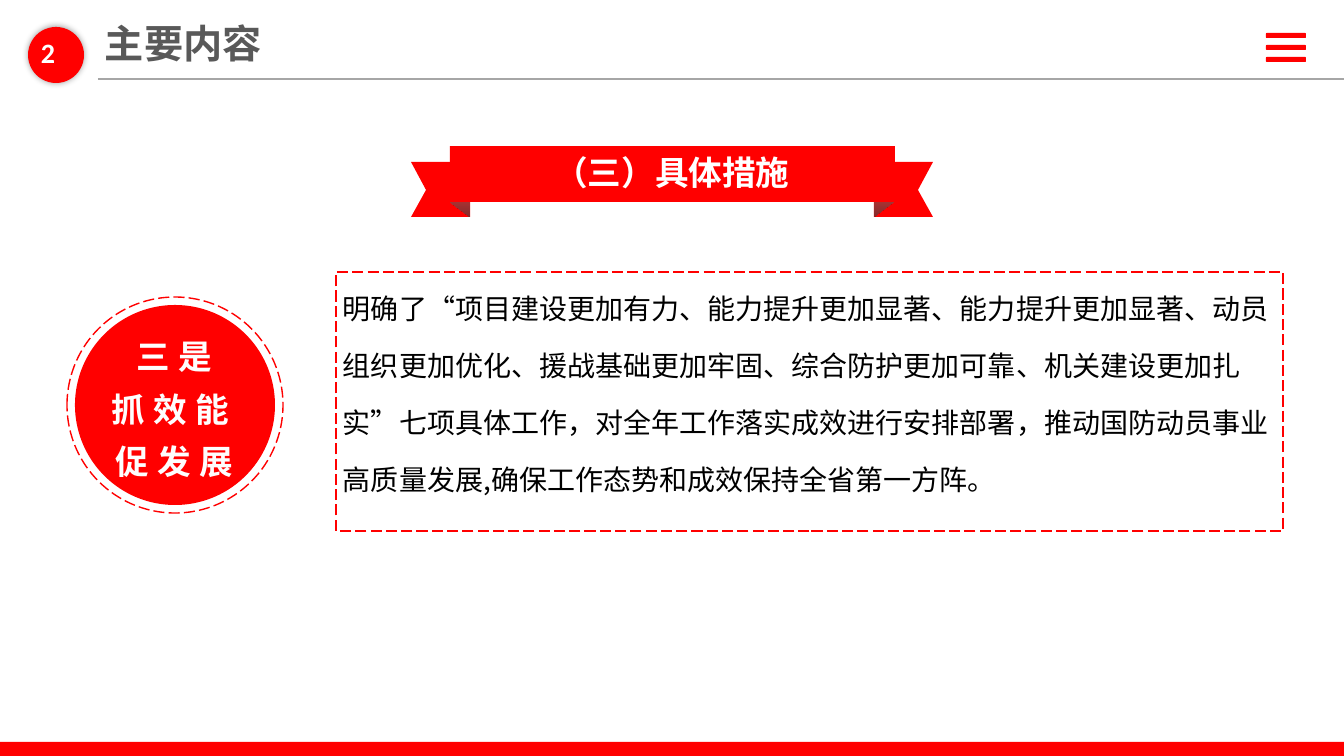
from lxml import etree
from pptx import Presentation
from pptx.dml.color import RGBColor
from pptx.enum.dml import MSO_LINE
from pptx.enum.shapes import MSO_CONNECTOR, MSO_SHAPE
from pptx.enum.text import PP_ALIGN
from pptx.oxml.ns import qn
from pptx.util import Emu, Pt

EMU_PER_PX = 914400 / 100.8
WIDTH, HEIGHT = 1344, 756
RECT, ROUND_RECT, OVAL = MSO_SHAPE.RECTANGLE, MSO_SHAPE.ROUNDED_RECTANGLE, MSO_SHAPE.OVAL
STRAIGHT = MSO_CONNECTOR.STRAIGHT
LONG_DASH = MSO_LINE.LONG_DASH
LEFT, CENTER, JUSTIFY = PP_ALIGN.LEFT, PP_ALIGN.CENTER, PP_ALIGN.JUSTIFY
RED, WHITE, GREY, BLACK = "FF0000", "FFFFFF", "A6A6A6", "000000"
CHINESE_FONT, NUMBER_FONT = "Noto Sans CJK SC", "Calibri"

BODY = (
    "明确了“项目建设更加有力、能力提升更加显著、能力提升更加显著、"
    "动员组织更加优化、援战基础更加牢固、综合防护更加可靠、机关建设更加扎实”"
    "七项具体工作，对全年工作落实成效进行安排部署，"
    "推动国防动员事业高质量发展,确保工作态势和成效保持全省第一方阵。"
)


def px(length):
    return Emu(round(length * EMU_PER_PX))


def color(value):
    return RGBColor.from_string(value)


class SlideBuilder:
    def __init__(self, page):
        self.page = page

    def paint(self, shape, fill=None, dashed=False):
        shape.shadow.inherit = False
        if fill:
            shape.fill.solid()
            shape.fill.fore_color.rgb = color(fill)
        else:
            shape.fill.background()
        if dashed:
            shape.line.color.rgb = color(RED)
            shape.line.width = Pt(1)
            shape.line.dash_style = LONG_DASH
        else:
            shape.line.fill.background()
        return shape

    def shape(self, kind, left, top, width, height, fill=None, dashed=False):
        shape = self.page.shapes.add_shape(kind, px(left), px(top), px(width), px(height))
        return self.paint(shape, fill, dashed)

    def glow(self, shape, blur, opacity):
        effects = shape.element.spPr.find(qn("a:effectLst"))
        shadow = etree.SubElement(effects, qn("a:outerShdw"), blurRad=str(Pt(blur)), dist="0", dir="0")
        shade = etree.SubElement(shadow, qn("a:srgbClr"), val=BLACK)
        etree.SubElement(shade, qn("a:alpha"), val=str(opacity * 1000))

    def polygon(self, points, fill=RED):
        builder = self.page.shapes.build_freeform(*points[0], scale=EMU_PER_PX)
        builder.add_line_segments(points[1:], close=True)
        return self.paint(builder.convert_to_shape(), fill)

    def gradient(self, shape, colors):
        shape.fill.gradient()
        shape.fill.gradient_angle = 270
        for stop, value in zip(shape.fill.gradient_stops, colors):
            stop.color.rgb = color(value)

    def rule(self, left, top, right, value, weight):
        line = self.page.shapes.add_connector(STRAIGHT, px(left), px(top), px(right), px(top))
        line.line.color.rgb = color(value)
        line.line.width = Pt(weight)
        etree.SubElement(line.element.spPr, qn("a:effectLst"))

    def text(self, lines, left, top, width, height, size, value, align=LEFT, bold=True,
             font=CHINESE_FONT, leading=None, tracking=0, margins=True):
        box = self.page.shapes.add_textbox(px(left), px(top), px(width), px(height))
        frame = box.text_frame
        frame.word_wrap = True
        if not margins:
            frame.margin_left = frame.margin_right = 0
            frame.margin_top = frame.margin_bottom = 0
        frame.text = "\n".join(lines)
        for para in frame.paragraphs:
            para.alignment = align
            if leading:
                para.line_spacing = Pt(leading)
            para.font.size = Pt(size)
            para.font.bold = bold
            para.font.color.rgb = color(value)
            para.font.name = font
            properties = para._p.pPr.find(qn("a:defRPr"))
            etree.SubElement(properties, qn("a:ea"), typeface=font)
            if tracking:
                properties.set("spc", str(tracking * 100))


def draw_header(builder):
    for top in (33, 45, 57):
        builder.shape(ROUND_RECT, 1266, top, 40, 5, RED)
    builder.rule(98, 79, WIDTH, GREY, 1.75)
    builder.shape(RECT, 0, 742, WIDTH, HEIGHT - 742, RED)
    builder.text(["主要内容"], 95, 14, 493, 57, 28, "595959")
    badge = builder.shape(OVAL, 28, 27, 56, 56, RED)
    builder.glow(badge, 5, 40)
    builder.text(["2"], 31, 31, 49, 44, 20, WHITE, JUSTIFY, font=NUMBER_FONT)


def draw_ribbon(builder):
    tail = [(411, 162), (470, 162), (470, 217), (411, 217), (426, 190)]
    fold = [(450, 167), (470, 167), (470, 217), (450, 202)]
    for mirrored in (True, False):
        tail_points, fold_points = (
            [(WIDTH - x if mirrored else x, y) for x, y in outline] for outline in (tail, fold)
        )
        builder.polygon(tail_points)
        builder.gradient(builder.polygon(fold_points), ("FE4444", "832B2B"))
    builder.shape(RECT, 450, 146, 445, 56, RED)
    builder.text(["（三）具体措施"], 471, 147, 402, 58, 24, WHITE, CENTER)


def draw_content(builder):
    builder.shape(OVAL, 75, 305, 200, 200, RED)
    builder.shape(OVAL, 67, 297, 216, 216, dashed=True)
    builder.text(["三是", "抓效能促发展"], 100, 319, 149, 168, 24, "FEFDFD", CENTER,
                 leading=37.5, tracking=6)
    builder.text([BODY], 343, 268, 926, 231, 20, BLACK, bold=False, leading=40.7, margins=False)
    builder.shape(RECT, 336, 272, 947, 259, dashed=True)


def main():
    deck = Presentation()
    deck.slide_width, deck.slide_height = px(WIDTH), px(HEIGHT)
    builder = SlideBuilder(deck.slides.add_slide(deck.slide_layouts[6]))
    draw_header(builder)
    draw_ribbon(builder)
    draw_content(builder)
    deck.save("out.pptx")


if __name__ == "__main__":
    main()
